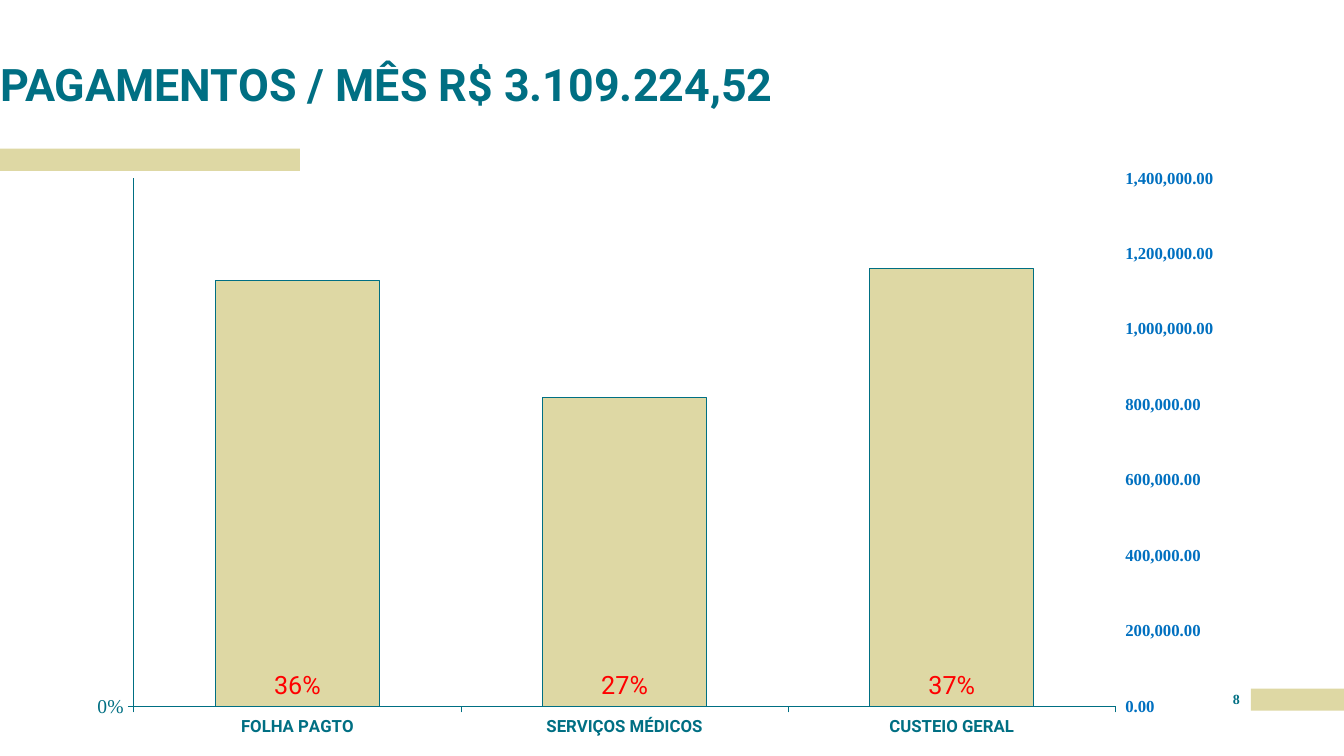
import copy
from dataclasses import dataclass

import lxml.etree
import pptx
import pptx.chart.axis
import pptx.chart.data
import pptx.dml.color
import pptx.enum.chart
import pptx.enum.shapes
import pptx.enum.text
import pptx.oxml.ns
import pptx.util

Pt = pptx.util.Pt
RGB = pptx.dml.color.RGBColor.from_string
qn = pptx.oxml.ns.qn


@dataclass(frozen=True)
class Theme:
    teal: str = "006F83"
    sand: str = "DED8A4"
    blue: str = "0070C0"
    red: str = "FF0000"
    grid: str = "A5E1E4"
    sans: str = "Roboto"
    serif: str = "Times New Roman"
    title: int = 32
    label: int = 18
    percent: int = 14
    axis: int = 12
    small: int = 10
    line: float = 0.75


class SlideBuilder:
    def __init__(self, prs, theme):
        self.theme = theme
        self.s = prs.slides.add_slide(prs.slide_layouts[5])

    def font(self, font, size, color, name, bold=False):
        font.size, font.name, font.bold = Pt(size), name, bold
        font.color.rgb = RGB(color)

    def line(self, line, color):
        line.color.rgb = RGB(color)
        line.width = Pt(self.theme.line)

    def text(self, sp, text, size, name, align, anchor):
        tf = sp.text_frame
        tf.text = text
        tf.word_wrap = True
        tf.auto_size = pptx.enum.text.MSO_AUTO_SIZE.NONE
        tf.vertical_anchor = anchor
        tf.margin_left = tf.margin_right = tf.margin_top = tf.margin_bottom = 0
        p = tf.paragraphs[0]
        p.alignment = align
        self.font(p.runs[0].font, size, self.theme.teal, name, True)
        return p

    def title(self, text, x, y, w, h):
        sp = self.s.shapes.title
        sp.left, sp.top, sp.width, sp.height = Pt(x), Pt(y), Pt(w), Pt(h)
        p = self.text(sp, text, self.theme.title, self.theme.sans,
                      pptx.enum.text.PP_ALIGN.LEFT, pptx.enum.text.MSO_ANCHOR.BOTTOM)
        p.line_spacing = 0.9

    def page_number(self, text, x, y, w, h):
        sp = self.s.shapes.add_textbox(Pt(x), Pt(y), Pt(w), Pt(h))
        self.text(sp, text, self.theme.small, self.theme.serif,
                  pptx.enum.text.PP_ALIGN.CENTER, pptx.enum.text.MSO_ANCHOR.TOP)

    def band(self, x, y, w, h):
        sp = self.s.shapes.add_shape(
            pptx.enum.shapes.MSO_SHAPE.RECTANGLE, Pt(x), Pt(y), Pt(w), Pt(h))
        sp.shadow.inherit = False
        sp.fill.solid()
        sp.fill.fore_color.rgb = RGB(self.theme.sand)
        sp.line.fill.background()

    def chart(self, categories, shares, amounts, x, y, w, h):
        t = self.theme
        data = pptx.chart.data.CategoryChartData()
        data.categories = categories
        data.add_series("Series 1", shares, "0%")
        data.add_series("Series 2", amounts, "#,##0.00")
        chart = self.s.shapes.add_chart(
            pptx.enum.chart.XL_CHART_TYPE.COLUMN_CLUSTERED,
            Pt(x), Pt(y), Pt(w), Pt(h), data).chart
        chart.has_legend = chart.has_title = False
        self.font(chart.font, t.small, t.teal, t.serif)
        plot = chart.plots[0]
        plot.gap_width = plot.overlap = 100
        plot.vary_by_categories = False

        # Axes
        cats, left = chart.category_axis, chart.value_axis
        right_cats, right = self.split_axes(chart)
        self.font(cats.tick_labels.font, t.axis, t.teal, t.sans, True)
        self.font(left.tick_labels.font, t.percent, t.teal, t.serif)
        self.font(right.tick_labels.font, t.axis, t.blue, t.serif, True)
        for axis in (cats, left):
            self.line(axis.format.line, t.teal)
        for axis in (cats, left, right):
            axis.major_tick_mark = pptx.enum.chart.XL_TICK_MARK.OUTSIDE
        left.minimum_scale, left.maximum_scale, left.major_unit = 0, 100, 10000
        left.has_major_gridlines = True
        self.line(left.major_gridlines.format.line, t.grid)
        right.minimum_scale, right.maximum_scale, right.major_unit = 0, 1400000, 200000
        right.has_major_gridlines = False
        right.format.line.fill.background()
        right.tick_label_position = pptx.enum.chart.XL_TICK_LABEL_POSITION.HIGH
        right_cats.visible = False
        for axis, code in ((left, "0%"), (right, "#,##0.00")):
            axis.tick_labels.number_format = code
            axis.tick_labels.number_format_is_linked = False

        # Series and labels
        share, amount = (p.series[0] for p in chart.plots)
        for ser, color in ((share, t.teal), (amount, t.sand)):
            ser.format.fill.solid()
            ser.format.fill.fore_color.rgb = RGB(color)
        self.line(amount.format.line, t.teal)
        labels = share.data_labels
        labels.show_value = True
        labels.number_format, labels.number_format_is_linked = "0%", False
        labels.position = pptx.enum.chart.XL_LABEL_POSITION.OUTSIDE_END
        self.font(labels.font, t.label, t.red, t.sans)
        self.plot_layout(chart, x=0.0862, y=0.031, w=0.832, h=0.905)

    def split_axes(self, chart):
        """Move the second series to its own pair of axes."""
        bars = chart.plots[0]._element
        cats, vals = chart.category_axis._element, chart.value_axis._element
        bars2, cats2, vals2 = (copy.deepcopy(e) for e in (bars, cats, vals))
        bars.remove(bars.findall(qn("c:ser"))[1])
        bars2.remove(bars2.findall(qn("c:ser"))[0])
        cat_id, val_id = "5001", "5002"
        for e, new_id in zip(bars2.findall(qn("c:axId")), (cat_id, val_id)):
            e.set("val", new_id)
        for axis, own, other in ((cats2, cat_id, val_id), (vals2, val_id, cat_id)):
            axis.find(qn("c:axId")).set("val", own)
            axis.find(qn("c:crossAx")).set("val", other)
        vals2.find(qn("c:axPos")).set("val", "r")
        vals2.find(qn("c:crosses")).set("val", "max")
        bars.addnext(bars2)
        vals.addnext(vals2)
        vals2.addnext(cats2)
        return (pptx.chart.axis.CategoryAxis(cats2), pptx.chart.axis.ValueAxis(vals2))

    def plot_layout(self, chart, **box):
        area = chart.plots[0]._element.getparent()
        for old in area.findall(qn("c:layout")):
            area.remove(old)
        layout = lxml.etree.Element(qn("c:layout"))
        manual = lxml.etree.SubElement(layout, qn("c:manualLayout"))
        settings = {"layoutTarget": "inner", "xMode": "edge", "yMode": "edge", **box}
        for tag, value in settings.items():
            lxml.etree.SubElement(manual, qn("c:" + tag)).set("val", str(value))
        area.insert(0, layout)


def main():
    prs = pptx.Presentation()
    prs.slide_width, prs.slide_height = Pt(960), Pt(540)
    s = SlideBuilder(prs, Theme())

    # Title and accent bands
    s.band(893.5, 491.8, 66.5, 15.8)
    s.band(0, 106.2, 214.2, 15.8)
    s.title("PAGAMENTOS / MÊS R$ 3.109.224,52", 0, 32.5, 614.2, 46.8)

    # Monthly payments: share on the left axis, amount on the right
    s.chart(("FOLHA PAGTO", "SERVIÇOS MÉDICOS", "CUSTEIO GERAL"),
            (0.36, 0.27, 0.37), (1130000, 820000, 1160000),
            23, 114.5, 843.8, 416.9)

    s.page_number("8", 872.6, 493.2, 20.9, 18)
    prs.save("out.pptx")


if __name__ == "__main__":
    main()
